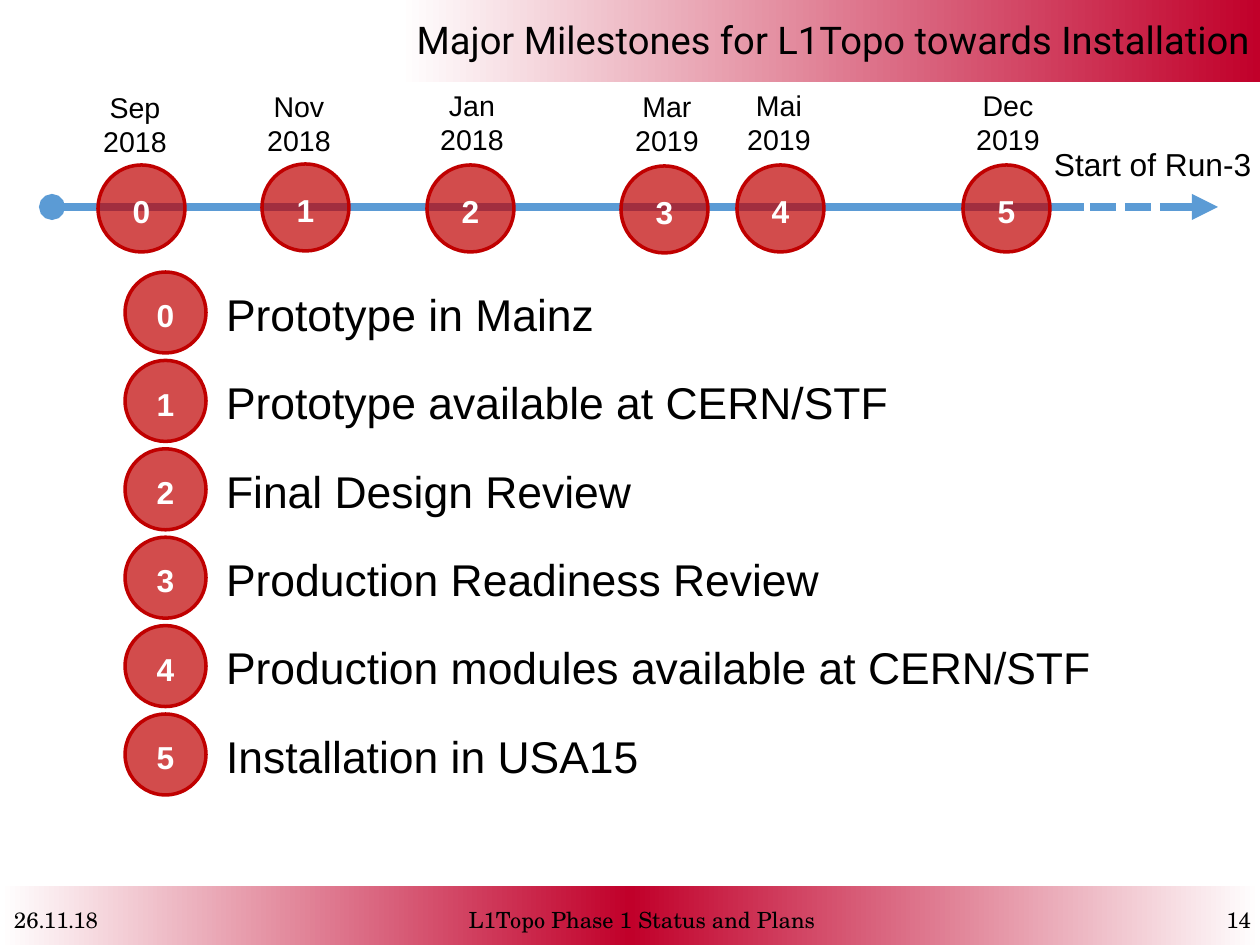
from copy import deepcopy

from pptx import Presentation
from pptx.dml.color import RGBColor
from pptx.enum.dml import MSO_LINE
from pptx.enum.shapes import MSO_CONNECTOR, MSO_SHAPE
from pptx.enum.text import MSO_ANCHOR, MSO_AUTO_SIZE, PP_ALIGN
from pptx.oxml.ns import qn
from pptx.util import Emu, Pt

LEFT, CENTER, RIGHT = PP_ALIGN.LEFT, PP_ALIGN.CENTER, PP_ALIGN.RIGHT
TOP, MIDDLE = MSO_ANCHOR.TOP, MSO_ANCHOR.MIDDLE
OVAL, RECT = MSO_SHAPE.OVAL, MSO_SHAPE.RECTANGLE
STRAIGHT = MSO_CONNECTOR.STRAIGHT
NO_FIT = MSO_AUTO_SIZE.NONE
SYS_DASH = MSO_LINE.SQUARE_DOT

COLORS = {"black": "000000", "white": "FFFFFF", "band": "C1002A",
          "milestone": "C00000", "timeline": "5B9BD5"}
BODY_FONT, TITLE_FONT, FOOTER_FONT = "Arial", "Roboto", "TeX Gyre Schola"

TITLE = "Major Milestones for L1Topo towards Installation"
RUN_START = "Start of Run-3"
MILESTONES = [
    ("Sep", "2018", 98, 165, 135, 84, "Prototype in Mainz"),
    ("Nov", "2018", 262, 164, 299, 83, "Prototype available at CERN/STF"),
    ("Jan", "2018", 427, 165, 472, 82, "Final Design Review"),
    ("Mar", "2019", 621, 166, 667, 83, "Production Readiness Review"),
    ("Mai", "2019", 737, 165, 779, 82, "Production modules available at CERN/STF"),
    ("Dec", "2019", 963, 165, 1008, 82, "Installation in USA15"),
]
FOOTER = [
    ("26.11.18", 14, 294, LEFT),
    ("L1Topo Phase 1 Status and Plans", 399, 486, CENTER),
    ("14", 957, 294, RIGHT),
]
BANDS = [
    ((399, 0, 861, 82), [(0, "white"), (1, "band")]),
    ((0, 886, 1260, 63), [(0, "white"), (0.5, "band"), (1, "white")]),
]
TIMELINE_Y = 207
MARKER_SIZE, KEY_SIZE = 87, 81
KEY_LEFT, KEY_FIRST, KEY_LAST = 125, 272, 714
DATE_WIDTH = 90


def px(n):
    return Emu(round(n * 914400 / 126))


def rgb(name):
    return RGBColor.from_string(COLORS[name])


def write(shape, lines, size, font=BODY_FONT, color="black", align=LEFT,
          anchor=TOP, inset=(13, 6), wrap=True, bold=False, after=0):
    frame = shape.text_frame
    frame.auto_size = NO_FIT
    frame.word_wrap = wrap
    frame.vertical_anchor = anchor
    frame.margin_left = frame.margin_right = px(inset[0])
    frame.margin_top = frame.margin_bottom = px(inset[1])
    for i, line in enumerate(lines):
        paragraph = frame.paragraphs[0] if i == 0 else frame.add_paragraph()
        paragraph.alignment = align
        paragraph.space_after = Pt(after)
        run = paragraph.add_run()
        run.text = line
        run.font.size = Pt(size)
        run.font.name = font
        run.font.bold = bold
        run.font.color.rgb = rgb(color)


def add_text(box, lines, size, **style):
    write(slide.shapes.add_textbox(*map(px, box)), lines, size, **style)


def add_band(box, stops):
    band = slide.shapes.add_shape(RECT, *map(px, box))
    band.shadow.inherit = False
    band.line.fill.background()
    band.fill.gradient()
    band.fill.gradient_angle = 0
    stop_list = band.fill._xPr.find(qn("a:gradFill")).find(qn("a:gsLst"))
    while len(stop_list) < len(stops):
        stop_list.append(deepcopy(stop_list[0]))
    for stop, (position, color) in zip(band.fill.gradient_stops, stops):
        stop.position = position
        stop.color.rgb = rgb(color)


def add_line(start, end, color):
    line = slide.shapes.add_connector(
        STRAIGHT, px(start), px(TIMELINE_Y), px(end), px(TIMELINE_Y))
    line.line.color.rgb = rgb(color)
    line.line.width = Pt(5)
    properties = line._element.spPr
    properties.append(properties.makeelement(qn("a:effectLst"), {}))
    return line


def add_marker(left, top, size, number):
    circle = slide.shapes.add_shape(OVAL, px(left), px(top), px(size), px(size))
    circle.shadow.inherit = False
    circle.fill.solid()
    circle.fill.fore_color.rgb = rgb("milestone")
    fill_color = circle._element.spPr.find(qn("a:solidFill"))[0]
    fill_color.append(fill_color.makeelement(qn("a:alpha"), {"val": "70000"}))
    circle.line.color.rgb = rgb("milestone")
    circle.line.width = Pt(2)
    write(circle, [str(number)], 18.1, color="white", align=CENTER,
          anchor=MIDDLE, inset=(0, 0), wrap=False, bold=True)
    circle.text_frame.margin_top = px(5)


prs = Presentation()
prs.slide_width, prs.slide_height = px(1260), px(945)
slide = prs.slides.add_slide(prs.slide_layouts[5])

for box, stops in BANDS:
    add_band(box, stops)

title = slide.shapes.title
title.left, title.top, title.width, title.height = map(px, (402, 1, 849, 77))
write(title, [TITLE], 21.8, font=TITLE_FONT, align=RIGHT, anchor=MIDDLE, inset=(0, 0))
slide.shapes._spTree.append(title._element)

for text, left, width, align in FOOTER:
    add_text((left, 906, width, 39), [text], 12.7, font=FOOTER_FONT, align=align, inset=(0, 0))

timeline = add_line(52, 1218, "timeline")
outline = timeline.line._get_or_add_ln()
for end, kind in (("a:headEnd", "oval"), ("a:tailEnd", "triangle")):
    outline.append(outline.makeelement(qn(end), {"type": kind}))
add_line(1084, 1168, "white")
add_line(1090, 1174, "timeline").line.dash_style = SYS_DASH

add_text((1041, 139, 224, 52), [RUN_START], 18.1, wrap=False)
add_text((213, 281, 975, 513), [m[-1] for m in MILESTONES], 25.4, after=20)

key_step = (KEY_LAST - KEY_FIRST) / (len(MILESTONES) - 1)
for number, (month, year, left, top, date_x, date_top, _) in enumerate(MILESTONES):
    add_text((date_x - DATE_WIDTH / 2, date_top, DATE_WIDTH, 82), [month, year],
             16.3, align=CENTER, wrap=False)
    add_marker(left, top, MARKER_SIZE, number)
    add_marker(KEY_LEFT, KEY_FIRST + number * key_step, KEY_SIZE, number)

prs.save("out.pptx")
